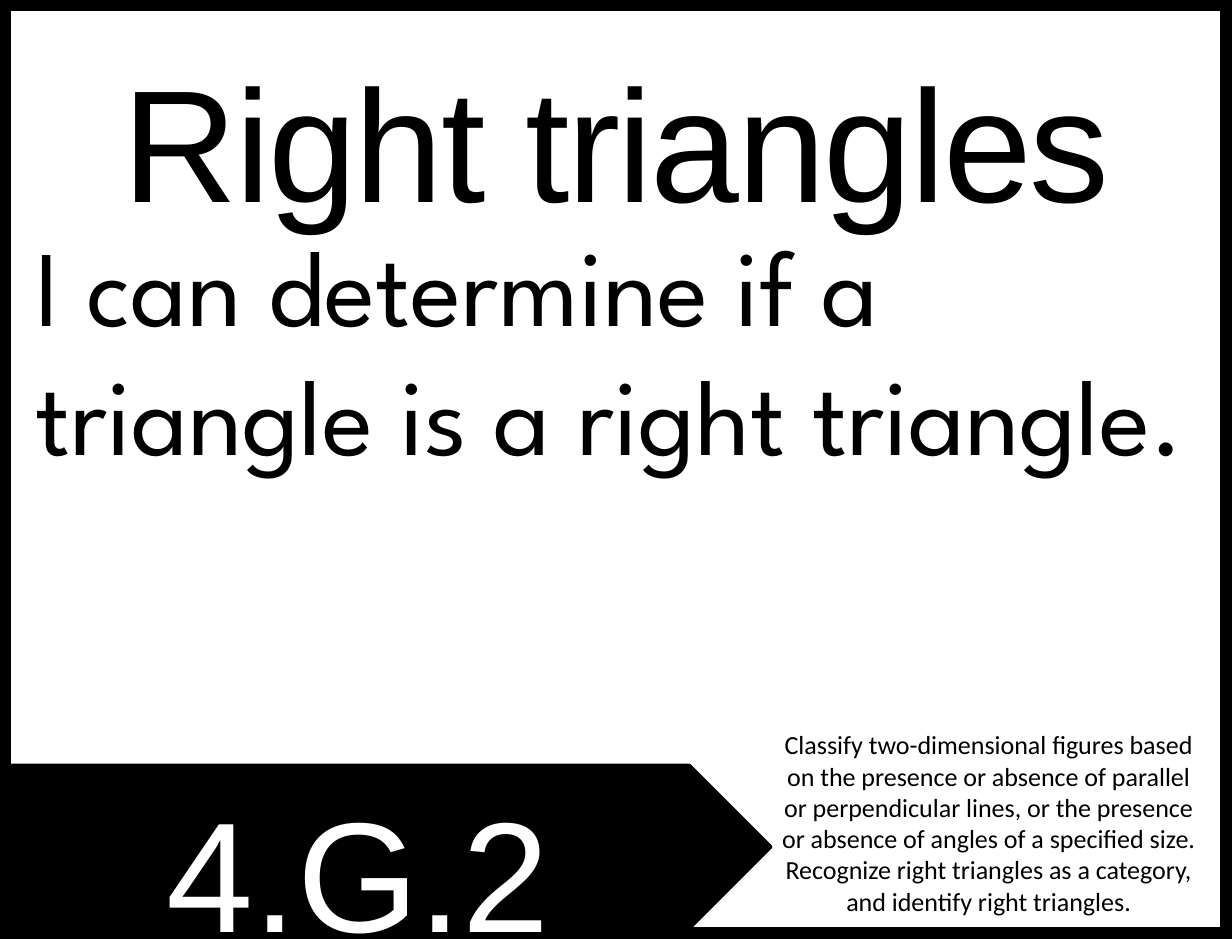
"""Build a standards poster slide about right triangles."""
from pptx import Presentation
from pptx.dml.color import RGBColor
from pptx.enum.shapes import MSO_SHAPE
from pptx.enum.text import MSO_ANCHOR, MSO_AUTO_SIZE, PP_ALIGN
from pptx.util import Pt

TOPIC = "Right triangles"
GOAL = "I can determine if a triangle is a right triangle."
CODE = "4.G.2"
STANDARD = (
    "Classify two-dimensional figures based on the presence or absence of parallel "
    "or perpendicular lines, or the presence or absence of angles of a specified size. "
    "Recognize right triangles as a category, and identify right triangles."
)

THEME = {
    "ink": RGBColor(0, 0, 0),
    "paper": RGBColor(255, 255, 255),
    "topic": ("Arial", 98),
    "goal": ("League Spartan", 66),
    "code": ("Arial", 96),
    "standard": ("Calibri", 16),
}
WIDTH, HEIGHT = 756, 576
BORDER = 8
MARGIN = 3


def place(shape, left, top, width, height):
    shape.left, shape.top, shape.width, shape.height = map(Pt, (left, top, width, height))


def write(shape, text, style, align=PP_ALIGN.CENTER, color="ink", spacing=1.0):
    frame = shape.text_frame
    frame.word_wrap = True
    frame.auto_size = MSO_AUTO_SIZE.NONE
    frame.vertical_anchor = MSO_ANCHOR.TOP
    paragraph = frame.paragraphs[0]
    paragraph.alignment = align
    paragraph.line_spacing = spacing
    run = paragraph.add_run()
    run.text = text
    run.font.name, size = THEME[style]
    run.font.size = Pt(size)
    run.font.color.rgb = THEME[color]
    return run


def add_outline(slide, preset, box, line_width):
    shape = slide.shapes.add_shape(preset, *map(Pt, box))
    shape.shadow.inherit = False
    shape.line.color.rgb = THEME["ink"]
    shape.line.width = Pt(line_width)
    return shape


def add_text(slide, box, *content, **options):
    return write(slide.shapes.add_textbox(*map(Pt, box)), *content, **options)


def main():
    deck = Presentation()
    deck.slide_width, deck.slide_height = Pt(WIDTH), Pt(HEIGHT)
    slide = deck.slides.add_slide(deck.slide_layouts[5])

    frame_box = (MARGIN, MARGIN, WIDTH - 2 * MARGIN, HEIGHT - 2 * MARGIN)
    border = add_outline(slide, MSO_SHAPE.RECTANGLE, frame_box, BORDER)
    border.fill.background()

    topic = slide.shapes.title
    place(topic, 0, 13, WIDTH, 87)
    topic_run = write(topic, TOPIC, "topic", spacing=1.08)
    topic_run.font._element.set("spc", "-150")
    slide.shapes._spTree.append(topic._element)

    banner = add_outline(slide, MSO_SHAPE.PENTAGON, (6, 469.5, 467, 100), 2)
    banner.fill.solid()
    banner.fill.fore_color.rgb = THEME["ink"]

    add_text(slide, (35, 463, 369.5, 124), CODE, "code", color="paper", spacing=1.08)
    add_text(slide, (14.5, 131, 731, 63.5), GOAL, "goal", align=PP_ALIGN.LEFT)
    add_text(slide, (468.5, 443.5, 276.5, 52.5), STANDARD, "standard")

    deck.save("out.pptx")


if __name__ == "__main__":
    main()
